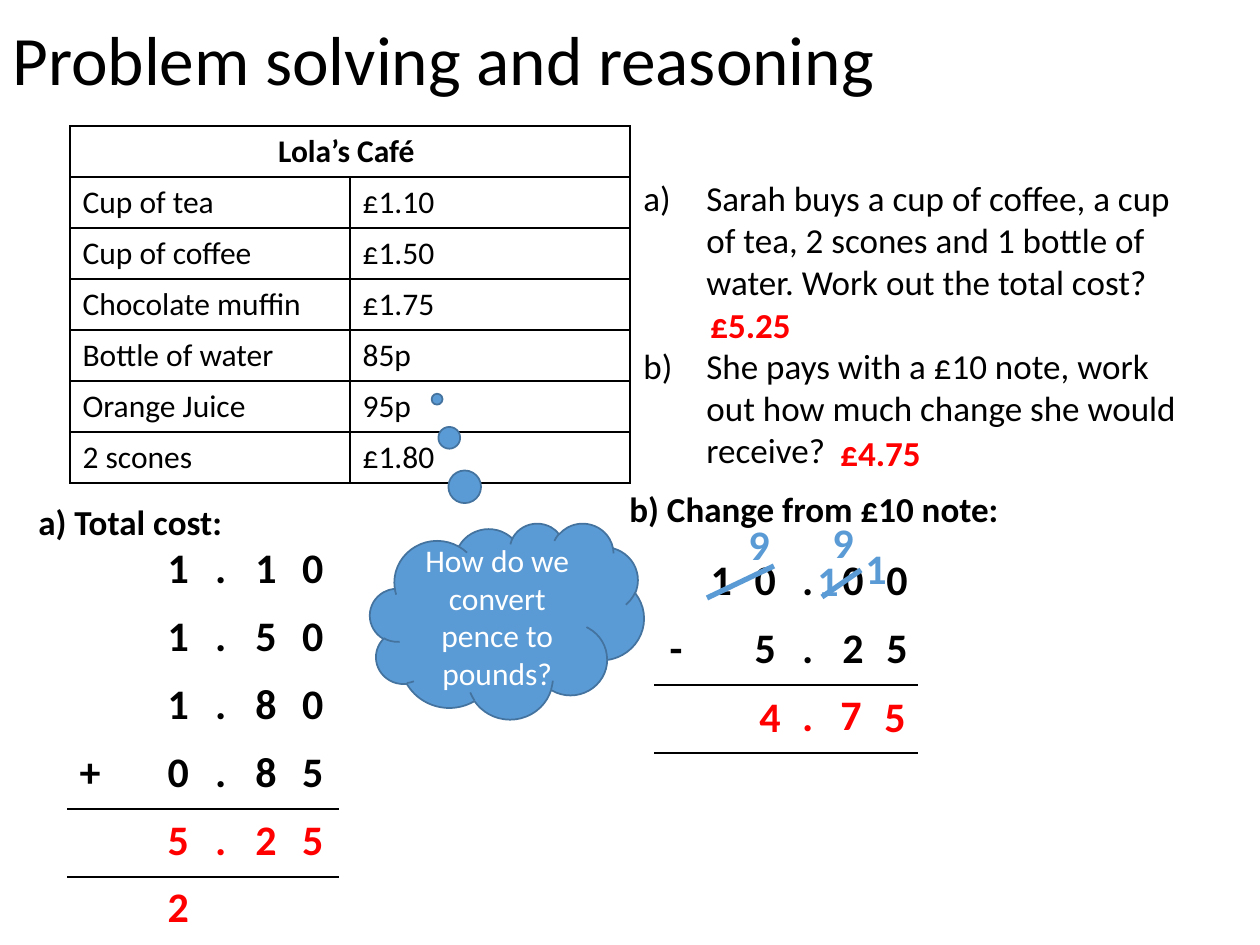
from lxml import etree
from pptx import Presentation
from pptx.dml.color import RGBColor
from pptx.enum.shapes import MSO_CONNECTOR, MSO_SHAPE
from pptx.enum.text import MSO_ANCHOR, PP_ALIGN
from pptx.oxml import parse_xml
from pptx.oxml.ns import nsdecls, qn
from pptx.util import Pt

STRAIGHT = MSO_CONNECTOR.STRAIGHT
CLOUD = MSO_SHAPE.CLOUD_CALLOUT
LEFT, CENTER = PP_ALIGN.LEFT, PP_ALIGN.CENTER
MIDDLE, BOTTOM = MSO_ANCHOR.MIDDLE, MSO_ANCHOR.BOTTOM
BLACK, WHITE, RED = "000000", "FFFFFF", "FF0000"
BLUE, DARK_BLUE = "5B9BD5", "43739E"
PLAIN_TABLE = "{2D5ABB26-0587-4C30-8999-92F81FD0307C}"


def px(*lengths):
    """Turn pixels, 126 to the inch, into EMU."""
    return [round(length * 914400 / 126) for length in lengths]


def write(para, text, size, color=BLACK, bold=False, align=LEFT):
    para.alignment = align
    span = para.add_run()
    span.text = text
    span.font.name = "Calibri"
    span.font.size = Pt(size)
    span.font.bold = bold
    span.font.color.rgb = RGBColor.from_string(color)


deck = Presentation()
deck.slide_width, deck.slide_height = px(1260, 945)
page = deck.slides.add_slide(deck.slide_layouts[6])

# Title
box = page.shapes.add_textbox(*px(0, 16, 1071, 91))
box.text_frame.word_wrap = True
box.text_frame.vertical_anchor = BOTTOM
title = box.text_frame.paragraphs[0]
title.line_spacing = 0.9
write(title, "Problem solving and reasoning", 39.6)

# Price list and the two column sums
prices = [
    ("Lola’s Café ", ""),
    ("Cup of tea", "£1.10"),
    ("Cup of coffee", "£1.50"),
    ("Chocolate muffin", "£1.75"),
    ("Bottle of water", "85p"),
    ("Orange Juice", "95p"),
    ("2 scones", "£1.80"),
]
addition = ["  1.10", "  1.50", "  1.80", "+ 0.85", "  5.25", "  2   "]
subtraction = [" 10.00", "- 5.25", "   .  ", "      "]

# left, top, column widths, row height, rows, ruled row edges, first answer row, framed
tables = [
    (70, 126, [280, 280], 51, prices, range(8), 7, True),
    (67, 537, [44] * 5 + [52], 68, addition, (4, 5), 4, False),
    (654, 549, [44] * 6, 68, subtraction, (2, 3), 2, False),
]
for left, top, widths, height, rows, rules, answer_row, framed in tables:
    frame = page.shapes.add_table(
        len(rows), len(widths), *px(left, top, sum(widths), height * len(rows)))
    grid = frame.table
    grid.first_row = grid.horz_banding = False
    grid._tbl.tblPr.find(qn("a:tableStyleId")).text = PLAIN_TABLE
    for column, width in zip(grid.columns, px(*widths)):
        column.width = width
    for r, row in enumerate(rows):
        grid.rows[r].height = px(height)[0]
        heading = framed and r == 0
        for c, text in enumerate(row):
            cell = grid.cell(r, c)
            edges = {"L": framed, "R": framed, "T": r in rules, "B": r + 1 in rules}
            for side, ruled in edges.items():
                paint = (f'<a:solidFill><a:srgbClr val="{BLACK}"/></a:solidFill>'
                         if ruled else "<a:noFill/>")
                cell._tc.get_or_add_tcPr().append(parse_xml(
                    f'<a:ln{side} {nsdecls("a")} w="12700">{paint}</a:ln{side}>'))
            cell.fill.background()
            if text.strip():
                write(cell.text_frame.paragraphs[0], text,
                      18 if framed else 24,
                      RED if r >= answer_row else BLACK,
                      heading or not framed,
                      CENTER if heading or not framed else LEFT)
    if framed:
        grid.cell(0, 0).merge(grid.cell(0, 1))

# Lettered questions
questions = [
    "Sarah buys a cup of coffee, a cup of tea, 2 scones and 1 bottle of water. "
    "Work out the total cost?",
    "She pays with a £10 note, work out how much change she would receive?",
]
box = page.shapes.add_textbox(*px(631, 170, 561, 310))
box.text_frame.word_wrap = True
for number, question in enumerate(questions):
    para = box.text_frame.add_paragraph() if number else box.text_frame.paragraphs[0]
    indent = px(63)[0]
    properties = para._p.get_or_add_pPr()
    properties.set("marL", str(indent))
    properties.set("indent", str(-indent))
    etree.SubElement(properties, qn("a:buFont"), typeface="Calibri")
    etree.SubElement(properties, qn("a:buAutoNum"), type="alphaLcParenR")
    if number:
        para.space_before = Pt(24)
    write(para, question, 20)

# Thought cloud
cloud = page.shapes.add_shape(CLOUD, *px(370, 523, 274, 196))
cloud.shadow.inherit = False
cloud.adjustments[0] = -0.255
cloud.adjustments[1] = -1.132
cloud.fill.solid()
cloud.fill.fore_color.rgb = RGBColor.from_string(BLUE)
cloud.line.color.rgb = RGBColor.from_string(DARK_BLUE)
cloud.line.width = Pt(1)
cloud.text_frame.word_wrap = True
cloud.text_frame.vertical_anchor = MIDDLE
write(cloud.text_frame.paragraphs[0], "How do we convert pence to pounds?",
      18, WHITE, align=CENTER)

# Strokes through the exchanged digits
for ends in [(707, 598, 774, 566), (822, 597, 861, 570)]:
    stroke = page.shapes.add_connector(STRAIGHT, *px(*ends))
    stroke.line.color.rgb = RGBColor.from_string(BLUE)
    stroke.line.width = Pt(3)
    etree.SubElement(stroke._element.spPr, qn("a:effectLst"))

# Headings, exchanged digits and answers: left, top, width, text, size, colour
labels = [
    (26, 494, 388, "a) Total cost:", 20, BLACK),
    (617, 481, 472, "b) Change from £10 note:", 20, BLACK),
    (736, 512, 52, "9", 24, BLUE),
    (805, 548, 52, "1", 24, BLUE),
    (853, 536, 52, "1", 24, BLUE),
    (820, 510, 52, "9", 24, BLUE),
    (747, 684, 52, "4", 24, RED),
    (828, 682, 52, "7", 24, RED),
    (872, 684, 52, "5", 24, RED),
    (698, 297, 388, "£5.25", 20, RED),
    (828, 425, 388, "£4.75", 20, RED),
]
for left, top, width, text, size, color in labels:
    box = page.shapes.add_textbox(*px(left, top, width, 55 if size == 20 else 63))
    box.text_frame.word_wrap = True
    write(box.text_frame.paragraphs[0], text, size, color, bold=True)

deck.save("out.pptx")
